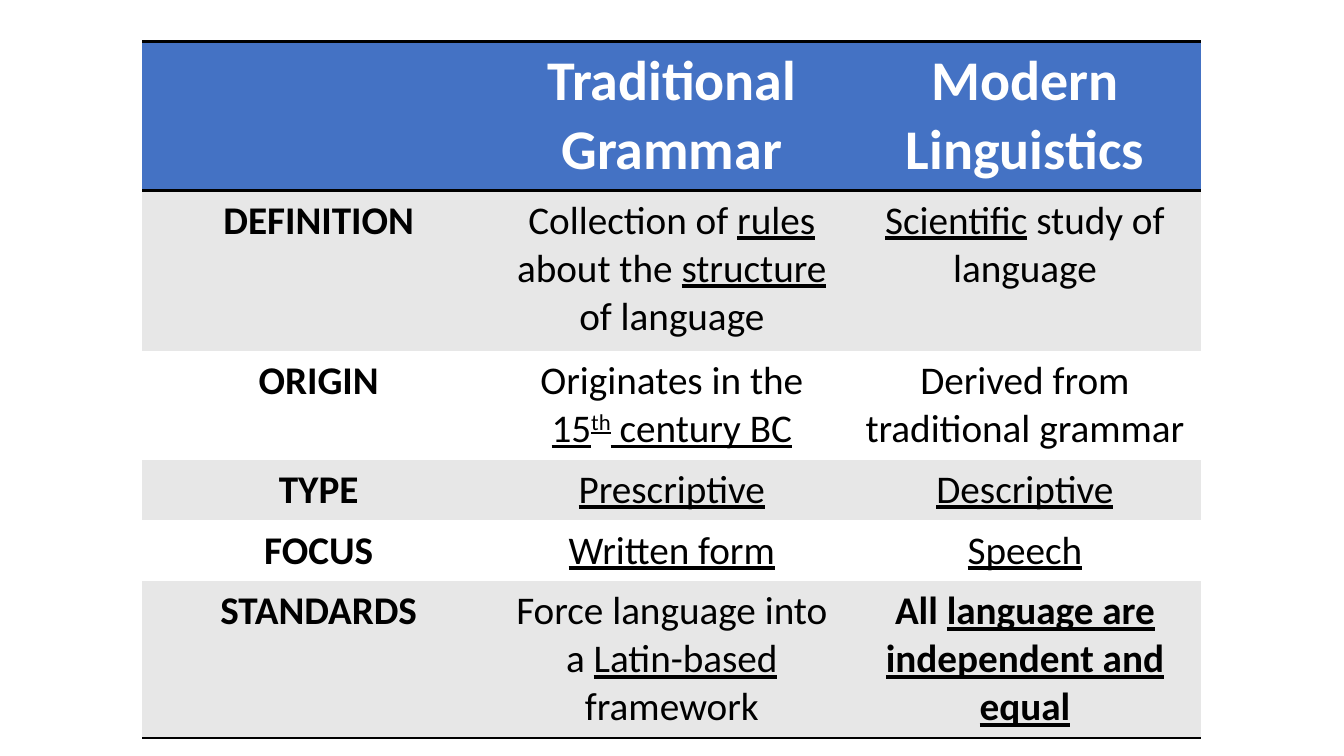
from dataclasses import dataclass

from lxml.etree import SubElement
from pptx import Presentation
from pptx.dml.color import RGBColor
from pptx.enum.text import PP_ALIGN
from pptx.oxml.ns import qn
from pptx.util import Pt

BLUE = RGBColor(0x44, 0x72, 0xC4)
GREY = RGBColor(0xE7, 0xE7, 0xE7)
WHITE = RGBColor(0xFF, 0xFF, 0xFF)
BLACK = RGBColor(0x00, 0x00, 0x00)

PLAIN_STYLE = "{2D5ABB26-0587-4C30-8999-92F81FD0307C}"
COLUMN_WIDTH = 252.25
TABLE_HEIGHT = 491
MARGINS = {"margin_left": Pt(9.5), "margin_right": Pt(9.5),
           "margin_top": Pt(4.6), "margin_bottom": Pt(4.6)}


@dataclass(frozen=True)
class Span:
    text: str
    underline: bool = False
    bold: bool = False
    superscript: bool = False


@dataclass(frozen=True)
class Row:
    height: float
    label: str
    traditional: tuple[Span, ...]
    modern: tuple[Span, ...]


ROWS = [
    Row(75.6, "", (Span("Traditional Grammar", bold=True),),
        (Span("Modern Linguistics", bold=True),)),
    Row(114.5, "DEFINITION",
        (Span("Collection of "), Span("rules ", True), Span("about the "),
         Span("structure", True), Span(" of language")),
        (Span("Scientific", True), Span(" study of language"))),
    Row(61.9, "ORIGIN",
        (Span("Originates in the "), Span("15", True),
         Span("th", True, superscript=True), Span(" century BC", True)),
        (Span("Derived from traditional grammar"),)),
    Row(36, "TYPE", (Span("Prescriptive", True),), (Span("Descriptive", True),)),
    Row(36, "FOCUS", (Span("Written form", True),), (Span("Speech", True),)),
    Row(88.6, "STANDARDS",
        (Span("Force language into a "), Span("Latin-based", True), Span(" framework")),
        (Span("All ", bold=True),
         Span("language are independent and equal", True, True))),
]


def add_border(cell, side: str) -> None:
    """Draw a black rule on one side: "T" for top or "B" for bottom."""
    properties = cell._tc.get_or_add_tcPr()
    line = SubElement(properties, qn(f"a:ln{side}"), w=str(Pt(2)))
    fill = SubElement(line, qn("a:solidFill"))
    SubElement(fill, qn("a:srgbClr"), val=str(BLACK))


def write_spans(cell, spans: tuple[Span, ...], size: float, color: RGBColor) -> None:
    para = cell.text_frame.paragraphs[0]
    para.alignment = PP_ALIGN.CENTER
    for span in spans:
        run = para.add_run()
        run.text = span.text
        formats = {"name": "Calibri", "size": Pt(size),
                   "bold": span.bold, "underline": span.underline}
        for name, value in formats.items():
            setattr(run.font, name, value)
        run.font.color.rgb = color
        if span.superscript:
            run.font._element.set("baseline", "30000")


def fill_row(table, index: int, row: Row) -> None:
    is_header = index == 0
    is_last = index == len(ROWS) - 1
    band = BLUE if is_header else GREY if index % 2 else WHITE
    sides = "TB" if is_header else "B" if is_last else ""
    label = (Span(row.label, bold=True),) if row.label else ()
    table.rows[index].height = Pt(row.height)
    for column, spans in enumerate((label, row.traditional, row.modern)):
        cell = table.cell(index, column)
        for name, value in MARGINS.items():
            setattr(cell, name, value)
        for side in sides:
            add_border(cell, side)
        cell.fill.solid()
        cell.fill.fore_color.rgb = band
        write_spans(cell, spans, 40 if is_header else 28, WHITE if is_header else BLACK)


def main() -> None:
    deck = Presentation()
    deck.slide_width, deck.slide_height = Pt(960), Pt(540)
    page = deck.slides.add_slide(deck.slide_layouts[6])
    frame = page.shapes.add_table(len(ROWS), 3, Pt(101.5), Pt(29.5),
                                  Pt(3 * COLUMN_WIDTH), Pt(TABLE_HEIGHT))
    table = frame.table
    table._tbl.tblPr.find(qn("a:tableStyleId")).text = PLAIN_STYLE
    for column in table.columns:
        column.width = Pt(COLUMN_WIDTH)
    for index, row in enumerate(ROWS):
        fill_row(table, index, row)
    frame.height = Pt(TABLE_HEIGHT)
    deck.save("out.pptx")


if __name__ == "__main__":
    main()
